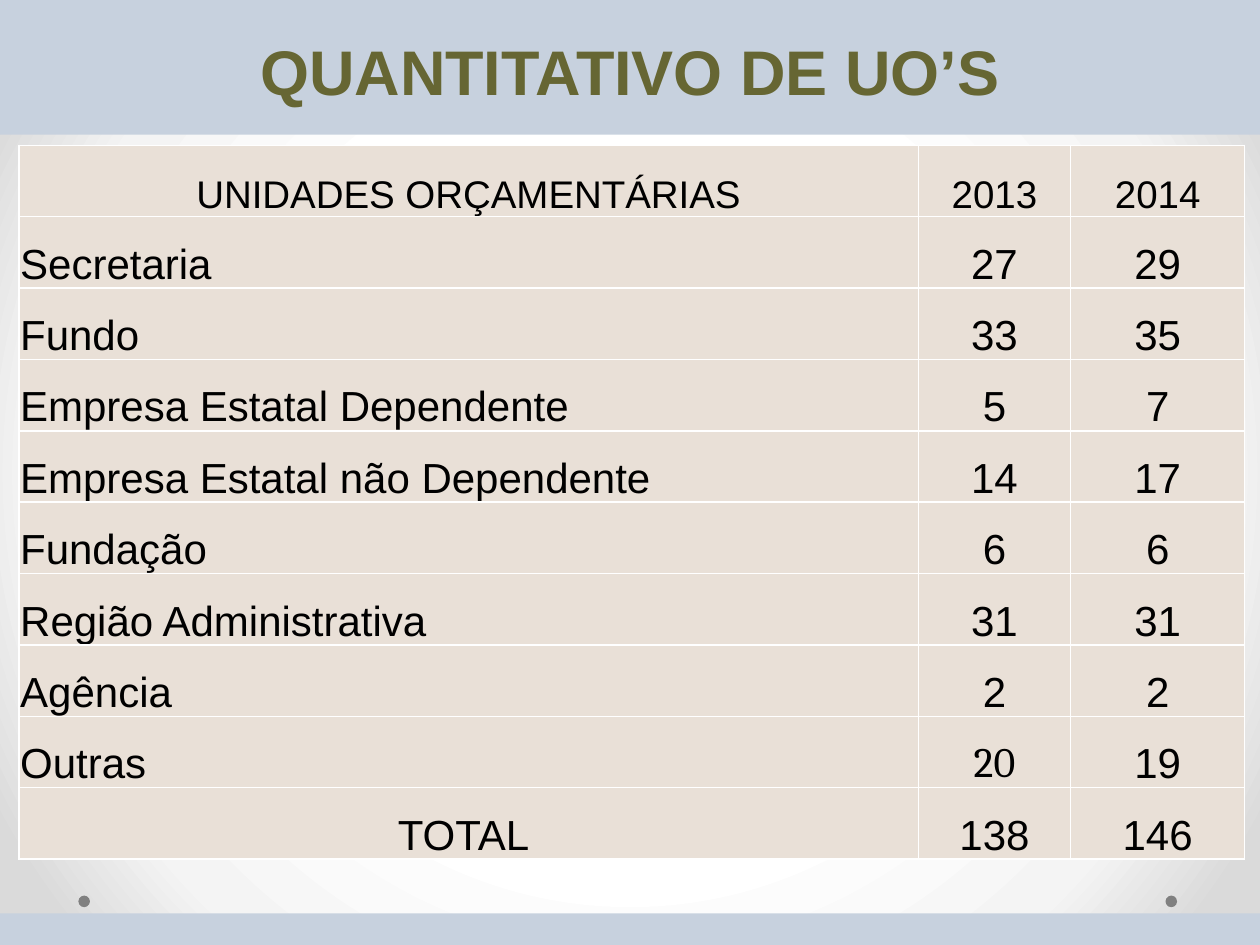
from pptx import Presentation
from pptx.dml.color import RGBColor
from pptx.enum.shapes import MSO_SHAPE as Shape
from pptx.enum.text import MSO_ANCHOR as Anchor, PP_ALIGN as Align
from pptx.oxml import parse_xml
from pptx.oxml.ns import nsdecls, qn
from pptx.util import Pt

# Content
TITLE = "QUANTITATIVO DE UO’S"
ROWS = [
    ("UNIDADES ORÇAMENTÁRIAS", "2013", "2014"),
    ("Secretaria", "27", "29"),
    ("Fundo", "33", "35"),
    ("Empresa Estatal Dependente", "5", "7"),
    ("Empresa Estatal não Dependente", "14", "17"),
    ("Fundação", "6", "6"),
    ("Região Administrativa", "31", "31"),
    ("Agência", "2", "2"),
    ("Outras", "20", "19"),
    ("TOTAL ", "138", "146"),
]
SERIF_CELL = (8, 1)
COLUMN_WIDTHS = (514, 87, 99.5)
ROW_HEIGHT = 40.8
WIDTH, HEIGHT = 720, 540


class Theme:
    font, serif = "Arial", "Cambria"
    title_size, header_size, body_size = 36, 22, 24
    title, text = "666633", "000000"
    bar, dot, cell, border = "C7D1DE", "808080", "E9E0D7", "FFFFFF"
    backdrop = ((50, "FFFFFF"), (76, "F4F4F4"), (92, "DADADA"))


def write_text(frame, text, size=Theme.body_size, color=Theme.text,
               font=Theme.font, bold=False, align=Align.LEFT):
    paragraph = frame.paragraphs[0]
    paragraph.alignment = align
    run = paragraph.add_run()
    run.text = text
    run.font.size, run.font.name, run.font.bold = Pt(size), font, bold
    run.font.color.rgb = RGBColor.from_string(color)


def add_plain_shape(slide, kind, left, top, width, height, color):
    shape = slide.shapes.add_shape(kind, Pt(left), Pt(top), Pt(width), Pt(height))
    shape.shadow.inherit = False
    shape.fill.solid()
    shape.fill.fore_color.rgb = RGBColor.from_string(color)
    shape.line.fill.background()


def paint_background(slide):
    slide.background.fill.gradient()
    stops = "".join(
        f'<a:gs pos="{position * 1000}"><a:srgbClr val="{color}"/></a:gs>'
        for position, color in Theme.backdrop)
    gradient = parse_xml(
        f'<a:gradFill {nsdecls("a")} rotWithShape="1"><a:gsLst>{stops}</a:gsLst>'
        '<a:path path="circle"><a:fillToRect l="50000" t="50000" r="50000" b="50000"/>'
        '</a:path></a:gradFill>')
    current = next(slide.element.iter(qn("a:gradFill")))
    current.getparent().replace(current, gradient)


def style_cell(cell):
    cell.vertical_anchor = Anchor.BOTTOM
    cell.margin_left = cell.margin_right = cell.margin_top = Pt(0.75)
    cell.margin_bottom = 0
    cell.fill.solid()
    cell.fill.fore_color.rgb = RGBColor.from_string(Theme.cell)
    properties = cell._tc.get_or_add_tcPr()
    for index, side in enumerate(("lnL", "lnR", "lnT", "lnB")):
        properties.insert(index, parse_xml(
            f'<a:{side} {nsdecls("a")} w="{Pt(1)}"><a:solidFill>'
            f'<a:srgbClr val="{Theme.border}"/></a:solidFill></a:{side}>'))


def add_units_table(slide, left, top):
    table = slide.shapes.add_table(
        len(ROWS), len(COLUMN_WIDTHS), Pt(left), Pt(top),
        Pt(sum(COLUMN_WIDTHS)), Pt(ROW_HEIGHT * len(ROWS))).table
    table.first_row = table.horz_banding = False
    for column, width in zip(table.columns, COLUMN_WIDTHS):
        column.width = Pt(width)
    for r, values in enumerate(ROWS):
        table.rows[r].height = Pt(ROW_HEIGHT)
        for c, value in enumerate(values):
            cell = table.cell(r, c)
            style_cell(cell)
            is_label = c == 0 and 0 < r < len(ROWS) - 1
            write_text(cell.text_frame, value,
                       size=Theme.body_size if r else Theme.header_size,
                       font=Theme.serif if (r, c) == SERIF_CELL else Theme.font,
                       align=Align.LEFT if is_label else Align.CENTER)


def main():
    presentation = Presentation()
    presentation.slide_width, presentation.slide_height = Pt(WIDTH), Pt(HEIGHT)
    slide = presentation.slides.add_slide(presentation.slide_layouts[6])
    paint_background(slide)

    # Footer dots
    for left in (666, 44.8):
        add_plain_shape(slide, Shape.OVAL, left, 511.8, 6.6, 6.6, Theme.dot)

    # Title on the top bar
    add_plain_shape(slide, Shape.RECTANGLE, 0, 0, WIDTH, 77, Theme.bar)
    title = slide.shapes.add_textbox(0, Pt(15), Pt(WIDTH), Pt(94.3))
    title.text_frame.word_wrap = True
    write_text(title.text_frame, TITLE, size=Theme.title_size,
               color=Theme.title, bold=True, align=Align.CENTER)

    # Bottom bar and table
    add_plain_shape(slide, Shape.RECTANGLE, 0, 522, WIDTH, 20, Theme.bar)
    add_units_table(slide, 10.8, 83)

    presentation.save("out.pptx")


if __name__ == "__main__":
    main()
